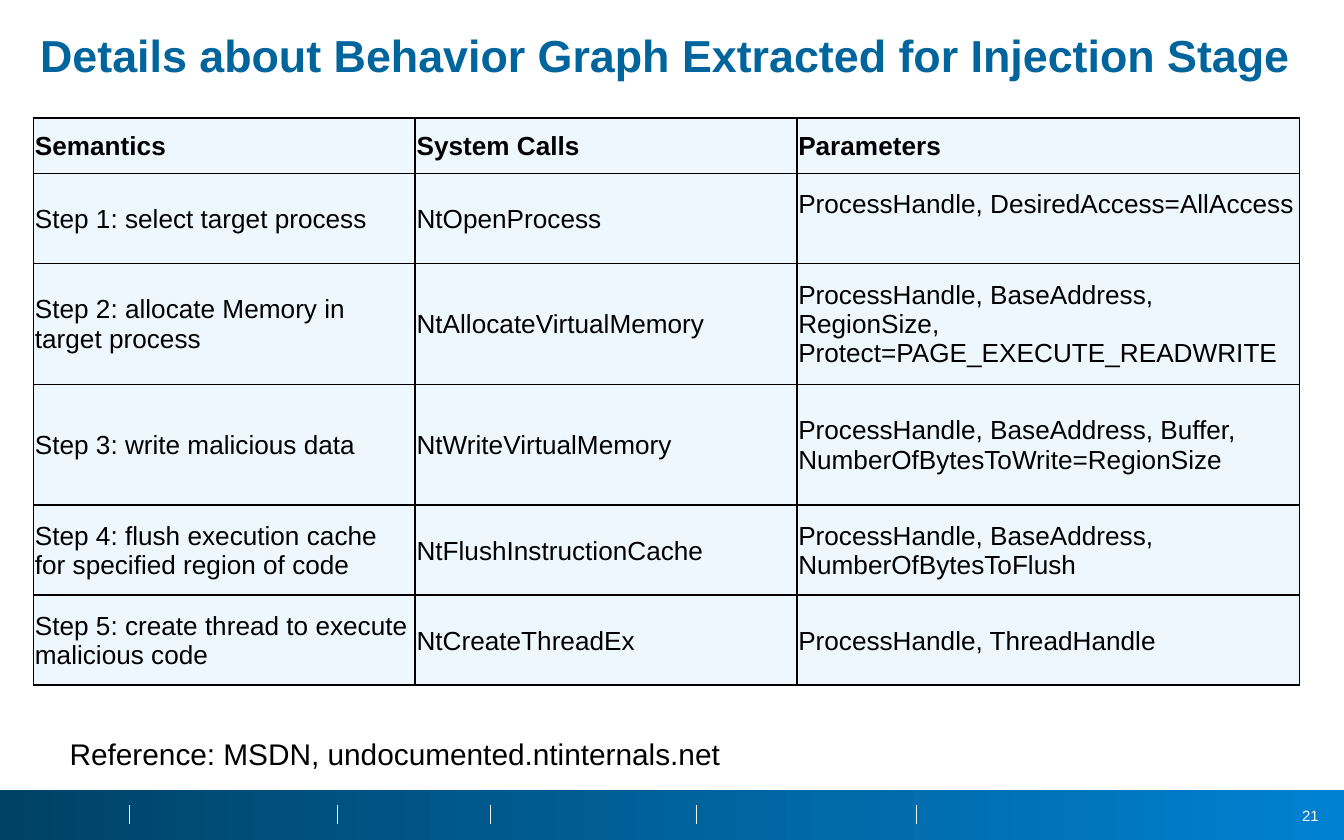
from lxml import etree
from pptx import Presentation
from pptx.dml.color import RGBColor
from pptx.enum.shapes import MSO_CONNECTOR, MSO_SHAPE
from pptx.enum.text import MSO_ANCHOR, PP_ALIGN
from pptx.oxml.ns import qn
from pptx.util import Inches, Pt

STRAIGHT = MSO_CONNECTOR.STRAIGHT
RECTANGLE = MSO_SHAPE.RECTANGLE
TOP, MIDDLE = MSO_ANCHOR.TOP, MSO_ANCHOR.MIDDLE
LEFT, RIGHT = PP_ALIGN.LEFT, PP_ALIGN.RIGHT

FONT = "Arial"
BLACK, WHITE = "000000", "FFFFFF"
TITLE_BLUE = "00649D"
BAR_DARK, BAR_LIGHT = "004266", "0081D0"
SEPARATOR_GRAY = "F2F2F2"
CELL_BLUE = "EDF7FD"

SEPARATORS = [0.96, 2.51, 3.65, 5.18, 6.82]
COLUMN_WIDTHS = [2.84, 2.84, 3.74]
ROW_HEIGHTS = [0.41, 0.67, 0.9, 0.9, 0.67, 0.67]
ROWS = [
    ("Semantics", "System Calls", "Parameters"),
    ("Step 1: select target process", "NtOpenProcess",
     "ProcessHandle, DesiredAccess=AllAccess"),
    ("Step 2: allocate Memory in target process", "NtAllocateVirtualMemory",
     "ProcessHandle, BaseAddress, RegionSize, Protect=PAGE_EXECUTE_READWRITE"),
    ("Step 3: write malicious data", "NtWriteVirtualMemory",
     "ProcessHandle, BaseAddress, Buffer, NumberOfBytesToWrite=RegionSize"),
    ("Step 4: flush execution cache for specified region of code",
     "NtFlushInstructionCache",
     "ProcessHandle, BaseAddress, NumberOfBytesToFlush"),
    ("Step 5: create thread to execute malicious code", "NtCreateThreadEx",
     "ProcessHandle, ThreadHandle"),
]


def color(hex_string):
    return RGBColor.from_string(hex_string)


def format_text(paragraph, size, hex_string, bold=False):
    for run in paragraph.runs:
        run.font.name = FONT
        run.font.size = Pt(size)
        run.font.bold = bold
        run.font.color.rgb = color(hex_string)


def add_text(slide, text, left, top, width, height, size, hex_string,
             bold=False, align=LEFT, anchor=TOP, spacing=1.0):
    box = slide.shapes.add_textbox(Inches(left), Inches(top),
                                   Inches(width), Inches(height))
    frame = box.text_frame
    frame.word_wrap = True
    frame.vertical_anchor = anchor
    frame.text = text
    paragraph = frame.paragraphs[0]
    paragraph.alignment = align
    paragraph.line_spacing = spacing
    format_text(paragraph, size, hex_string, bold)
    return paragraph


def add_footer_bar(slide):
    bar = slide.shapes.add_shape(RECTANGLE, 0, Inches(5.88),
                                 Inches(10), Inches(0.37))
    bar.shadow.inherit = False
    bar.line.fill.background()
    bar.fill.gradient()
    bar.fill.gradient_angle = 0
    for stop, shade, position in zip(bar.fill.gradient_stops,
                                     (BAR_DARK, BAR_LIGHT), (0, 1)):
        stop.color.rgb = color(shade)
        stop.position = position


def add_separator(slide, x):
    line = slide.shapes.add_connector(STRAIGHT, Inches(x), Inches(5.99),
                                      Inches(x), Inches(6.13))
    line.line.color.rgb = color(SEPARATOR_GRAY)
    line.line.width = Pt(0.25)
    etree.SubElement(line._element.spPr, qn("a:effectLst"))


def add_borders(cell):
    """Draw a one-point black line on each side of the cell."""
    properties = cell._tc.get_or_add_tcPr()
    for index, side in enumerate(("a:lnL", "a:lnR", "a:lnT", "a:lnB")):
        line = etree.Element(qn(side), w=str(Pt(1)))
        fill = etree.SubElement(line, qn("a:solidFill"))
        etree.SubElement(fill, qn("a:srgbClr"), val=BLACK)
        properties.insert(index, line)


def fill_cell(cell, text, bold):
    cell.text = text
    cell.vertical_anchor = MIDDLE
    cell.margin_left = cell.margin_right = cell.margin_top = Inches(0.01)
    cell.margin_bottom = 0
    cell.fill.solid()
    cell.fill.fore_color.rgb = color(CELL_BLUE)
    format_text(cell.text_frame.paragraphs[0], 14, BLACK, bold)
    add_borders(cell)


def add_call_table(slide):
    frame = slide.shapes.add_table(
        len(ROWS), len(COLUMN_WIDTHS), Inches(0.25), Inches(0.88),
        Inches(sum(COLUMN_WIDTHS)), Inches(sum(ROW_HEIGHTS)))
    table = frame.table
    table.horz_banding = False
    for column, width in zip(table.columns, COLUMN_WIDTHS):
        column.width = Inches(width)
    for row, height, texts in zip(table.rows, ROW_HEIGHTS, ROWS):
        row.height = Inches(height)
        for cell, text in zip(row.cells, texts):
            fill_cell(cell, text, bold=texts is ROWS[0])
    # The first parameter entry sits above the middle of its cell.
    table.cell(1, 2).margin_bottom = Inches(0.22)


def main():
    presentation = Presentation()
    presentation.slide_width = Inches(10)
    presentation.slide_height = Inches(6.25)
    slide = presentation.slides.add_slide(presentation.slide_layouts[6])

    add_footer_bar(slide)
    add_text(slide, "21", 9.49, 5.95, 0.42, 0.24, 8, WHITE,
             align=RIGHT, anchor=MIDDLE)
    for x in SEPARATORS:
        add_separator(slide, x)
    add_text(slide, "Details about Behavior Graph Extracted for Injection Stage",
             0.2, 0.2, 9.97, 0.36, 24, TITLE_BLUE, bold=True, spacing=0.9)
    reference = add_text(slide, "Reference: MSDN, undocumented.ntinternals.net",
                         0.42, 5.29, 8.5, 0.45, 16, BLACK, spacing=1.5)
    reference._p.get_or_add_pPr().set("indent", str(Inches(-0.03)))
    add_call_table(slide)

    presentation.save("out.pptx")


if __name__ == "__main__":
    main()
